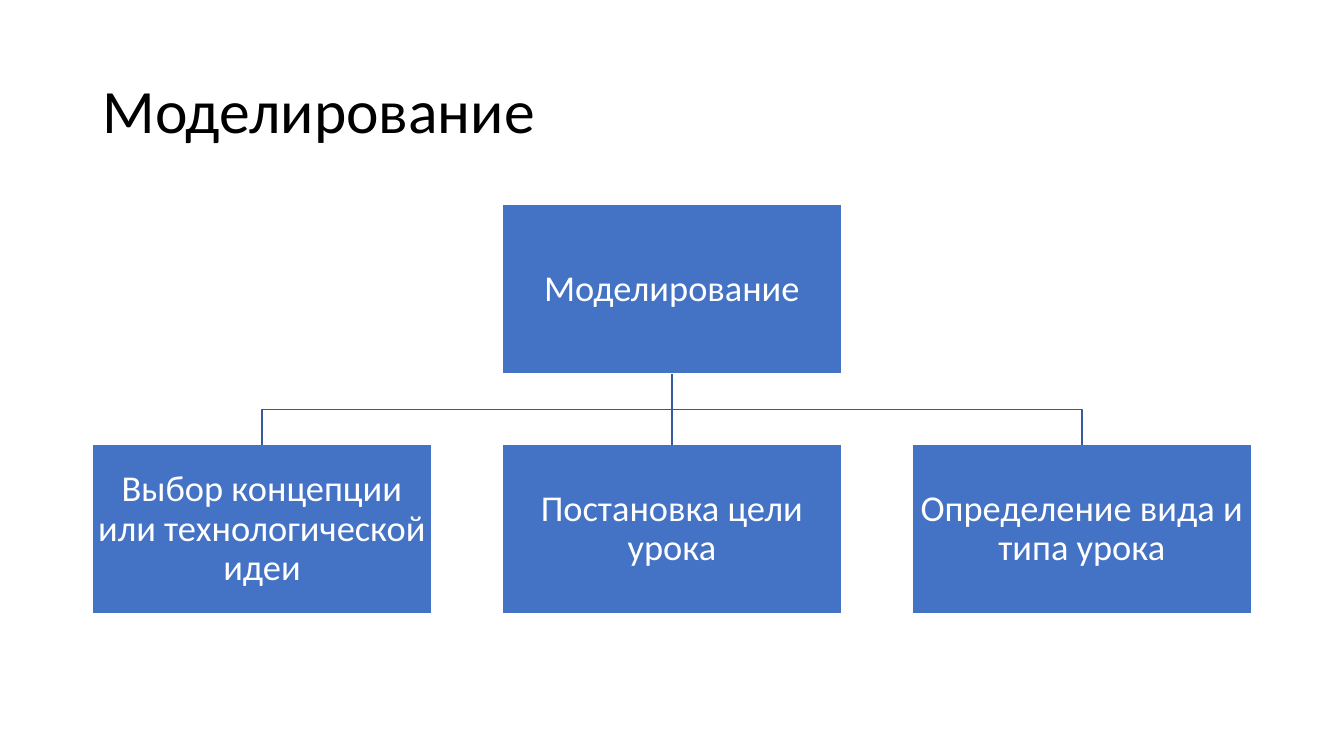
from pptx import Presentation
from pptx.dml.color import RGBColor
from pptx.enum import shapes, text
from pptx.oxml import ns
from pptx.util import Pt
from lxml import etree

BLACK = RGBColor(0x00, 0x00, 0x00)
WHITE = RGBColor(0xFF, 0xFF, 0xFF)
BLUE = RGBColor(0x44, 0x72, 0xC4)
DARK_BLUE = RGBColor(0x36, 0x5B, 0x9D)

SLIDE_WIDTH, SLIDE_HEIGHT = 960, 540
BOX_WIDTH, BOX_HEIGHT = 242, 121
COLUMN_STEP = 292.8
ROOT_TOP, STEP_TOP = 146.2, 317.6
STEPS = [
    "Выбор концепции или технологической идеи",
    "Постановка цели урока",
    "Определение вида и типа урока",
]


class HierarchySlide:
    font = "Calibri"
    line_width = Pt(1)

    def __init__(self, slide):
        self.slide = slide

    def fill_text(self, frame, words, size, color, alignment):
        frame.word_wrap = True
        frame.auto_size = text.MSO_AUTO_SIZE.NONE
        frame.vertical_anchor = text.MSO_ANCHOR.MIDDLE
        paragraph = frame.paragraphs[0]
        paragraph.alignment = alignment
        paragraph.line_spacing = 0.9
        run = paragraph.add_run()
        run.text = words
        run.font.name = self.font
        run.font.size = Pt(size)
        run.font.color.rgb = color

    def title(self, words, left, top, width, height):
        shape = self.slide.shapes.title
        shape.left, shape.top = Pt(left), Pt(top)
        shape.width, shape.height = Pt(width), Pt(height)
        self.fill_text(shape.text_frame, words, 44, BLACK, text.PP_ALIGN.LEFT)

    def box(self, words, center, top):
        shape = self.slide.shapes.add_shape(
            shapes.MSO_SHAPE.RECTANGLE,
            Pt(center - BOX_WIDTH / 2), Pt(top), Pt(BOX_WIDTH), Pt(BOX_HEIGHT))
        shape.shadow.inherit = False
        shape.fill.solid()
        shape.fill.fore_color.rgb = BLUE
        self.outline(shape, WHITE)
        frame = shape.text_frame
        frame.margin_left = frame.margin_right = Pt(1.3)
        frame.margin_top = frame.margin_bottom = Pt(1.3)
        self.fill_text(frame, words, 26, WHITE, text.PP_ALIGN.CENTER)
        return shape

    def outline(self, shape, color):
        shape.line.color.rgb = color
        shape.line.width = self.line_width

    def straight_branch(self, parent, child):
        connector = self.slide.shapes.add_connector(
            shapes.MSO_CONNECTOR.STRAIGHT, 0, 0, 0, 0)
        connector.begin_connect(parent, 2)
        connector.end_connect(child, 0)
        self.outline(connector, DARK_BLUE)
        etree.SubElement(connector._element.spPr, ns.qn("a:effectLst"))

    def bent_branch(self, parent, child):
        """Run down from the parent, across, and down to the child."""
        start_x = parent.left + parent.width // 2
        end_x = child.left + child.width // 2
        start_y, end_y = parent.top + parent.height, child.top
        middle_y = (start_y + end_y) // 2
        builder = self.slide.shapes.build_freeform(start_x, start_y)
        builder.add_line_segments(
            [(start_x, middle_y), (end_x, middle_y), (end_x, end_y)], close=False)
        shape = builder.convert_to_shape()
        shape.shadow.inherit = False
        shape.fill.background()
        self.outline(shape, DARK_BLUE)


def main():
    presentation = Presentation()
    presentation.slide_width = Pt(SLIDE_WIDTH)
    presentation.slide_height = Pt(SLIDE_HEIGHT)
    title_only = presentation.slide_layouts[5]
    page = HierarchySlide(presentation.slides.add_slide(title_only))

    page.title("Моделирование", 66, 28.8, 828, 104.4)
    middle = SLIDE_WIDTH / 2
    root = page.box("Моделирование", middle, ROOT_TOP)
    for column, words in enumerate(STEPS, start=-1):
        step = page.box(words, middle + column * COLUMN_STEP, STEP_TOP)
        if column == 0:
            page.straight_branch(root, step)
        else:
            page.bent_branch(root, step)

    presentation.save("out.pptx")


if __name__ == "__main__":
    main()
